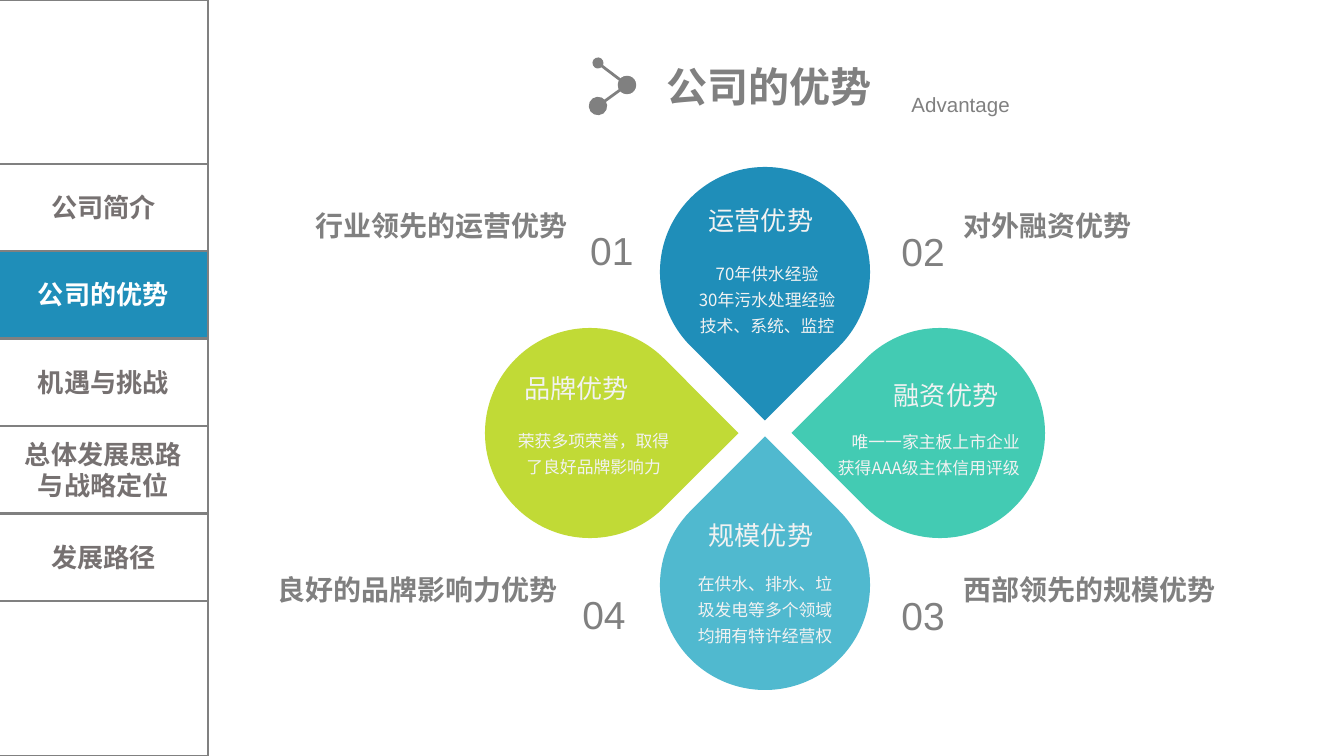
"""Build the company advantages slide with a sidebar and four teardrops."""
from lxml import etree
from pptx import Presentation
from pptx import util as u
from pptx.dml.color import RGBColor
from pptx.enum import shapes, text
from pptx.oxml.ns import qn

PX = 914400 / 134.4
GREY = RGBColor(0x80, 0x80, 0x80)
DARK = RGBColor(0x76, 0x71, 0x71)
PALE = RGBColor(0xF2, 0xF2, 0xF2)
WHITE = RGBColor(0xFF, 0xFF, 0xFF)
BLUE = RGBColor(0x1F, 0x8E, 0xB9)
SKY = RGBColor(0x50, 0xB9, 0xCF)
TEAL = RGBColor(0x43, 0xCB, 0xB3)
LIME = RGBColor(0xC1, 0xDA, 0x36)
CJK = "Noto Sans CJK SC"
LEFT, CENTER, RIGHT = text.PP_ALIGN.LEFT, text.PP_ALIGN.CENTER, text.PP_ALIGN.RIGHT


def style(tf, size, color, bold=False, align=LEFT, font=CJK, spacing=None):
    for p in tf.paragraphs:
        p.alignment = align
        p.line_spacing = spacing
        for r in p.runs:
            r.font.size = u.Pt(size)
            r.font.bold = bold
            r.font.color.rgb = color
            r.font.name = font
            etree.SubElement(r.font._element, qn("a:ea"), typeface=CJK)


def add_text(box, words, size, color, wrap=True, **look):
    sp = s.shapes.add_textbox(*[u.Emu(int(v * PX)) for v in box])
    tf = sp.text_frame
    tf.margin_left = tf.margin_right = u.Inches(0.07)
    tf.margin_top = tf.margin_bottom = u.Inches(0.04)
    tf.word_wrap = wrap
    tf.auto_size = text.MSO_AUTO_SIZE.SHAPE_TO_FIT_TEXT
    tf.text = words
    style(tf, size, color, **look)
    return tf


prs = Presentation()
prs.slide_width, prs.slide_height = u.Emu(int(1344 * PX)), u.Emu(int(756 * PX))
s = prs.slides.add_slide(prs.slide_layouts[6])

labels = [
    ("西部领先的规模优势", (954, 567, 281, 44), "03", (892, 556), LEFT),
    ("对外融资优势", (954, 203, 317, 44), "02", (892, 192), LEFT),
    ("良好的品牌影响力优势", (262, 567, 305, 44), "04", (562, 555), RIGHT),
    ("行业领先的运营优势", (284, 203, 293, 44), "01", (570, 191), RIGHT),
]
for label, box, number, at, align in labels:
    add_text(box, label, 15, GREY, bold=True, align=align, font="Arial")
    tf = add_text((*at, 73, 65), number, 36, GREY, align=align, font="Arial")
    tf.paragraphs[0].runs[0].font._element.set("baseline", "-3000")

petals = [
    (660, 167, 135, BLUE),
    (660, 480, 315, SKY),
    (835, 328, 225, TEAL),
    (485, 328, 45, LIME),
]
for x, y, angle, color in petals:
    sp = s.shapes.add_shape(shapes.MSO_SHAPE.TEAR, *[u.Emu(int(v * PX)) for v in (x, y, 210, 210)])
    sp.rotation = angle
    sp.shadow.inherit = False
    sp.fill.solid()
    sp.fill.fore_color.rgb = color
    sp.line.fill.background()

details = [
    ("品牌优势", (515, 367), LEFT, "荣获多项荣誉，取得了良好品牌影响力", (504, 419, 179, 63), CENTER),
    ("融资优势", (852, 374), RIGHT, "唯一一家主板上市企业\n获得AAA级主体信用评级", (798, 420, 231, 63), RIGHT),
    ("运营优势", (683, 199), CENTER, "70年供水经验\n30年污水处理经验\n技术、系统、监控", (683, 252, 168, 90), CENTER),
    ("规模优势", (683, 514), CENTER, "在供水、排水、垃圾发电等多个领域均拥有特许经营权", (685, 562, 160, 90), CENTER),
]
for heading, at, heading_align, body, box, body_align in details:
    add_text((*at, 156, 51), heading, 14, PALE, wrap=False, align=heading_align)
    add_text(box, body, 9, PALE, align=body_align, spacing=1.3)

add_text((657, 56, 228, 60), "公司的优势", 22, GREY, wrap=False, bold=True)
add_text((902, 87, 366, 35), "Advantage", 11, GREY, font="Arial")

nodes = [(598, 63, "med"), (627, 85, "lg"), (598, 106, "lg")]
for (x1, y1, head), (x2, y2, tail) in zip(nodes, nodes[1:]):
    c = s.shapes.add_connector(shapes.MSO_CONNECTOR.STRAIGHT, *[u.Emu(int(v * PX)) for v in (x1, y1, x2, y2)])
    c.line.color.rgb = GREY
    c.line.width = u.Pt(1.5)
    ln = c.line._get_or_add_ln()
    for end, size in (("a:headEnd", head), ("a:tailEnd", tail)):
        etree.SubElement(ln, qn(end), type="oval", w=size, len=size)
    etree.SubElement(c._element.spPr, qn("a:effectLst"))

menu = ["公司简介", "公司的优势", "机遇与挑战", "总体发展思路与战略定位", "发展路径"]
cells = [("", 0, 756)] + [(name, 164 + i * 175 // 2, 87) for i, name in enumerate(menu)]
for name, y, height in cells:
    sp = s.shapes.add_shape(shapes.MSO_SHAPE.RECTANGLE, *[u.Emu(int(v * PX)) for v in (-1, y, 209, height)])
    sp.shadow.inherit = False
    sp.line.color.rgb = GREY
    sp.line.width = u.Pt(1)
    active = name == "公司的优势"
    if active:
        sp.fill.solid()
        sp.fill.fore_color.rgb = BLUE
    else:
        sp.fill.background()
    if name:
        tf = sp.text_frame
        tf.word_wrap = True
        tf.vertical_anchor = text.MSO_ANCHOR.MIDDLE
        tf.text = name
        style(tf, 14, WHITE if active else DARK, bold=True, align=CENTER)

prs.save("out.pptx")
